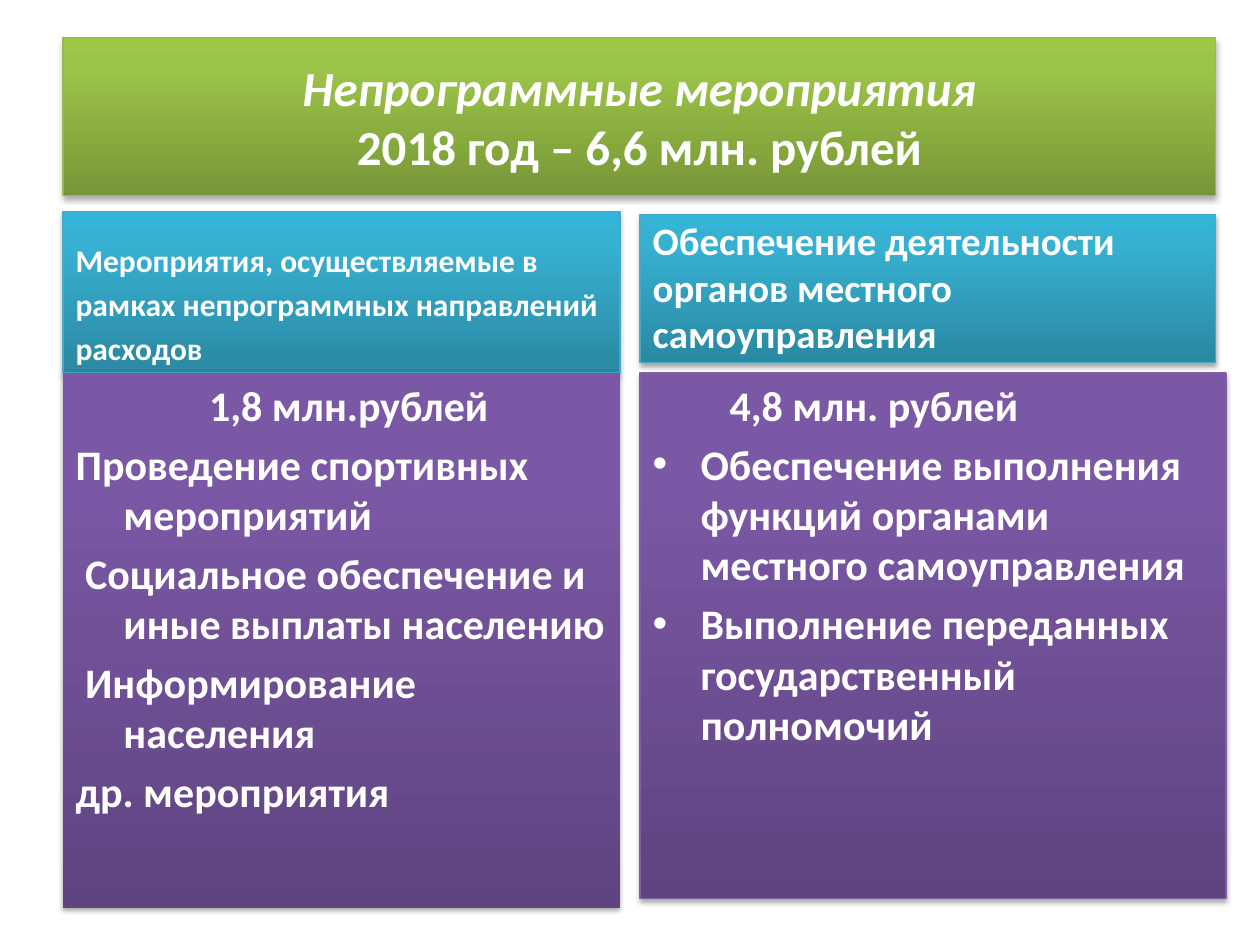
from dataclasses import dataclass
from copy import deepcopy
from lxml.etree import SubElement
from pptx import Presentation
from pptx.dml.color import RGBColor as RGB
from pptx.enum.text import MSO_ANCHOR as Anchor, MSO_AUTO_SIZE as AutoSize, PP_ALIGN as Align
from pptx.oxml.ns import qn
from pptx.util import Inches, Pt


@dataclass(frozen=True)
class Theme:
    font: str = "Calibri"
    text: str = "FFFFFF"
    shadow: str = "000000"
    green: tuple = ("779737", "9BC348", "9DC746")
    blue: tuple = ("2A88A2", "37B1D2", "34B4D6")
    purple: tuple = ("5F4480", "7B58A6", "7C57A8")
    green_line: str = "98B955"
    blue_line: str = "46AAC5"
    purple_line: str = "7D60A0"
    title_size: float = 28
    left_heading_size: float = 18
    right_heading_size: float = 22.2
    body_size: float = 24


theme = Theme()


def style_panel(panel, box, gradient, line, anchor):
    panel.left, panel.top, panel.width, panel.height = map(Inches, box)
    panel.fill.gradient()
    panel.fill.gradient_angle = 90
    stop_list = panel.element.spPr.find(".//" + qn("a:gsLst"))
    stop_list.append(deepcopy(stop_list[-1]))
    for stop, position, color in zip(panel.fill.gradient_stops, (0, 0.8, 1), gradient):
        stop.position = position
        stop.color.rgb = RGB.from_string(color)
    if line:
        panel.line.color.rgb = RGB.from_string(line)
        panel.line.width = Pt(0.75)
    else:
        panel.line.fill.background()
    panel.shadow.inherit = False
    effects = panel.element.spPr.find(qn("a:effectLst"))
    shadow = SubElement(effects, qn("a:outerShdw"), blurRad=str(Pt(3.1)), dist=str(Pt(1.8)),
                        dir="5400000", rotWithShape="0")
    shadow_color = SubElement(shadow, qn("a:srgbClr"), val=theme.shadow)
    SubElement(shadow_color, qn("a:alpha"), val="35000")
    panel.text_frame.word_wrap = True
    panel.text_frame.auto_size = AutoSize.NONE
    panel.text_frame.vertical_anchor = anchor


def style_text(paragraph, size):
    paragraph.font.name = theme.font
    paragraph.font.size = Pt(size)
    paragraph.font.bold = True
    paragraph.font.color.rgb = RGB.from_string(theme.text)


deck = Presentation()
deck.slide_width, deck.slide_height = Inches(10), Inches(7.5)
slide = deck.slides.add_slide(deck.slide_layouts[4])
places = slide.placeholders

title = slide.shapes.title
style_panel(title, (0.5, 0.3, 9.15, 1.25), theme.green, theme.green_line, Anchor.MIDDLE)
heading = title.text_frame.paragraphs[0]
heading.alignment = Align.CENTER
style_text(heading, theme.title_size)
subject = heading.add_run()
subject.text = "Непрограммные мероприятия"
subject.font.italic = True
heading.add_line_break()
heading.add_run().text = "2018 год – 6,6 млн. рублей"

headings = [
    (1, (0.5, 1.68, 4.42, 1.28), theme.left_heading_size,
     ["Мероприятия, осуществляемые в", "рамках непрограммных направлений", "расходов"]),
    (3, (5.08, 1.7, 4.57, 1.18), theme.right_heading_size,
     ["Обеспечение деятельности органов местного самоуправления"]),
]
for index, box, size, lines in headings:
    style_panel(places[index], box, theme.blue, theme.blue_line, Anchor.BOTTOM)
    places[index].text_frame.text = "\n".join(lines)
    for paragraph in places[index].text_frame.paragraphs:
        style_text(paragraph, size)

expenses = [
    (2, (0.5, 2.96, 4.42, 4.25), None, 1.06, False,
     ["1,8 млн.рублей", "Проведение спортивных мероприятий",
      " Социальное обеспечение и иные выплаты населению",
      " Информирование населения", "др. мероприятия"]),
    (4, (5.08, 2.96, 4.65, 4.17), theme.purple_line, 0.61, True,
     ["4,8 млн. рублей", "Обеспечение выполнения функций органами местного самоуправления",
      "Выполнение переданных государственный полномочий"]),
]
for index, box, line, amount_indent, bulleted, items in expenses:
    style_panel(places[index], box, theme.purple, line, Anchor.TOP)
    places[index].text_frame.text = "\n".join(items)
    for order, paragraph in enumerate(places[index].text_frame.paragraphs):
        is_amount = order == 0
        properties = paragraph._p.get_or_add_pPr()
        properties.set("marL", str(Inches(amount_indent if is_amount else 0.38)))
        properties.set("indent", str(Inches(0 if is_amount else -0.38)))
        if is_amount or not bulleted:
            SubElement(properties, qn("a:buNone"))
        else:
            SubElement(properties, qn("a:buChar"), char="•")
        style_text(paragraph, theme.body_size)

deck.save("out.pptx")
